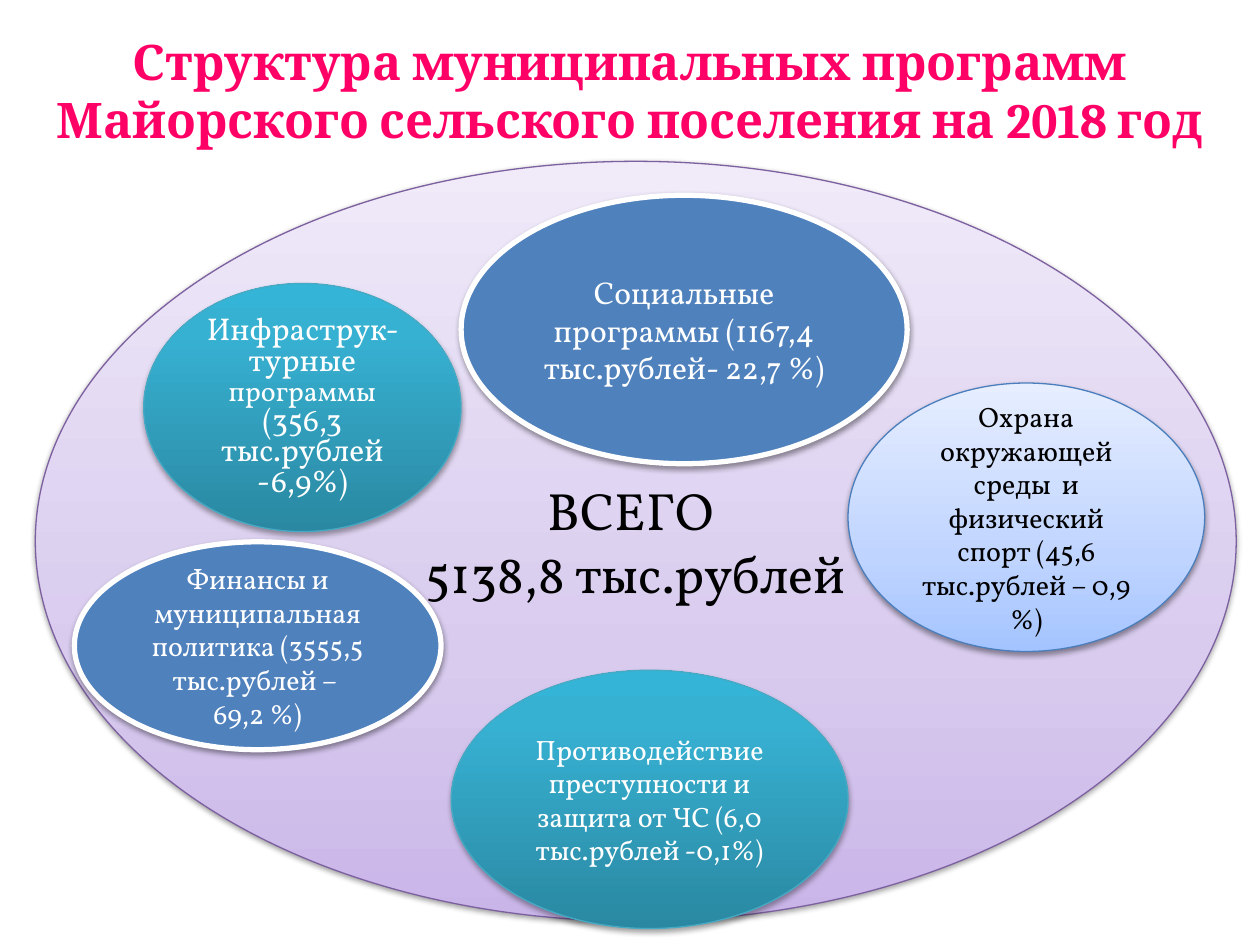
from lxml.etree import SubElement as Sub
from pptx import Presentation
from pptx.dml.color import RGBColor as Rgb
from pptx.enum.shapes import MSO_SHAPE as Kind
from pptx.enum.text import MSO_ANCHOR as Anchor, PP_ALIGN as Align
from pptx.oxml.ns import qn
from pptx.util import Pt

HUES = {"title": "FF0066", "dark": "000000", "light": "FFFFFF",
        "blue": "4F81BD", "violet": "7D60A0", "sky": "4B7EBC", "teal": "46AAC5"}
FADES = {"violet": [(0, "C9B5E8"), (35, "D8CBEE"), (100, "F0EAF9")],
         "sky": [(0, "A4C4FF"), (35, "BFD4FF"), (100, "E6EEFF")],
         "teal": [(0, "2A88A2"), (80, "37B1D2"), (100, "34B4D6")]}
STYLES = {"violet": ("violet", 0.75, "dark"), "sky": ("sky", 0.75, "dark"),
          "teal": ("teal", 0.75, "light"), "blue": ("light", 3, "light")}
BUBBLES = [
    ((263.5, 111.6, 254.9, 153.4), "blue", 18,
     ["Социальные программы (1167,4 тыс.рублей- 22,7 %)"], None),
    ((484.6, 218.9, 203.8, 153.4), "sky", 16,
     ["Охрана окружающей среды  и физический спорт (45,6 тыс.рублей – 0,9 %)"], None),
    ((257.8, 383, 226.8, 147.6), "teal", 16,
     ["Противодействие преступности и защита от ЧС (6,0 тыс.рублей -0,1%)"], None),
    ((42.5, 309.6, 209.5, 118.8), "blue", 16,
     ["Финансы и муниципальная политика (3555,5 тыс.рублей – ", "69,2 %)"], None),
    ((82.1, 162, 181.4, 141.8), "teal", 18,
     [["Инфраструк-турные ", ("программы", 16), " (356,3 тыс.рублей -6,9%)"]], 0.8),
]


def write(shape, paras, size, hue, font="Vollkorn", bold=False, gap=None):
    """Fill a shape with centred paragraphs, each a string or a list of runs."""
    frame = shape.text_frame
    frame.word_wrap = True
    frame.vertical_anchor = Anchor.MIDDLE
    for i, para in enumerate(paras):
        line = frame.add_paragraph() if i else frame.paragraphs[0]
        line.alignment = Align.CENTER
        line.line_spacing = gap
        for part in [para] if isinstance(para, str) else para:
            words, pts = (part, size) if isinstance(part, str) else part
            run = line.add_run()
            run.text = words
            run.font.name, run.font.size, run.font.bold = font, Pt(pts), bold
            run.font.color.rgb = Rgb.from_string(HUES[hue])


def paint(shape, style):
    """Give a shape its solid colour or its upward fade."""
    if style not in FADES:
        shape.fill.solid()
        shape.fill.fore_color.rgb = Rgb.from_string(HUES[style])
        return
    shape.fill.gradient()
    shape.fill.gradient_angle = 90
    stops = next(shape.element.iter(qn("a:gsLst")))
    for stop in list(stops):
        stops.remove(stop)
    for place, tone in FADES[style]:
        stop = Sub(stops, qn("a:gs"), pos=str(place * 1000))
        Sub(stop, qn("a:srgbClr"), val=tone)


def shade(shape, alpha, dist):
    """Cast a soft black shadow straight down."""
    shape.shadow.inherit = False
    effects = shape.element.spPr.find(qn("a:effectLst"))
    cast = Sub(effects, qn("a:outerShdw"), blurRad=str(Pt(3.1)), dist=str(Pt(dist)),
               dir="5400000", rotWithShape="0")
    tone = Sub(cast, qn("a:srgbClr"), val=HUES["dark"])
    Sub(tone, qn("a:alpha"), val=str(alpha * 1000))


def bubble(slide, box, style, size, paras, gap=None):
    """Draw one ellipse with its label."""
    shape = slide.shapes.add_shape(Kind.OVAL, *map(Pt, box))
    edge, width, ink = STYLES[style]
    paint(shape, style)
    shape.line.color.rgb = Rgb.from_string(HUES[edge])
    shape.line.width = Pt(width)
    shade(shape, *((35, 1.8) if style == "teal" else (38, 1.6)))
    write(shape, paras, size, ink, gap=gap)


def main():
    """Build the slide of municipal programmes."""
    deck = Presentation()
    deck.slide_width, deck.slide_height = Pt(720), Pt(540)
    slide = deck.slides.add_slide(deck.slide_layouts[6])
    title = slide.shapes.add_textbox(Pt(14), Pt(13.6), Pt(692), Pt(75.6))
    write(title, ["Структура муниципальных программ Майорского сельского поселения на 2018 год"],
          28, "title", font="Cambria", bold=True)
    bubble(slide, (20.2, 92.2, 686.2, 434.2), "violet", 30, ["ВСЕГО ", "5138,8 тыс.рублей"])
    for item in BUBBLES:
        bubble(slide, *item)
    deck.save("out.pptx")


if __name__ == "__main__":
    main()
